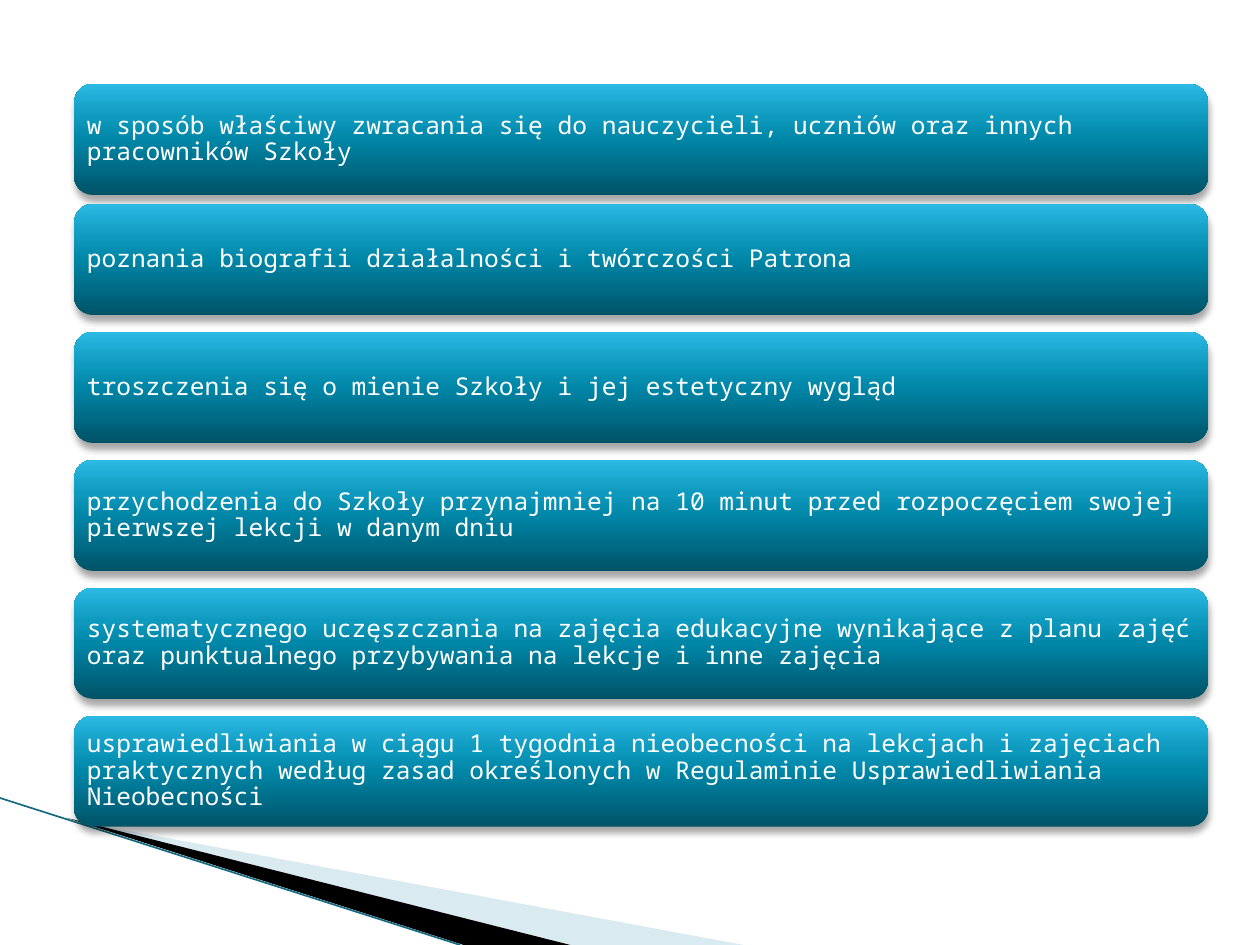
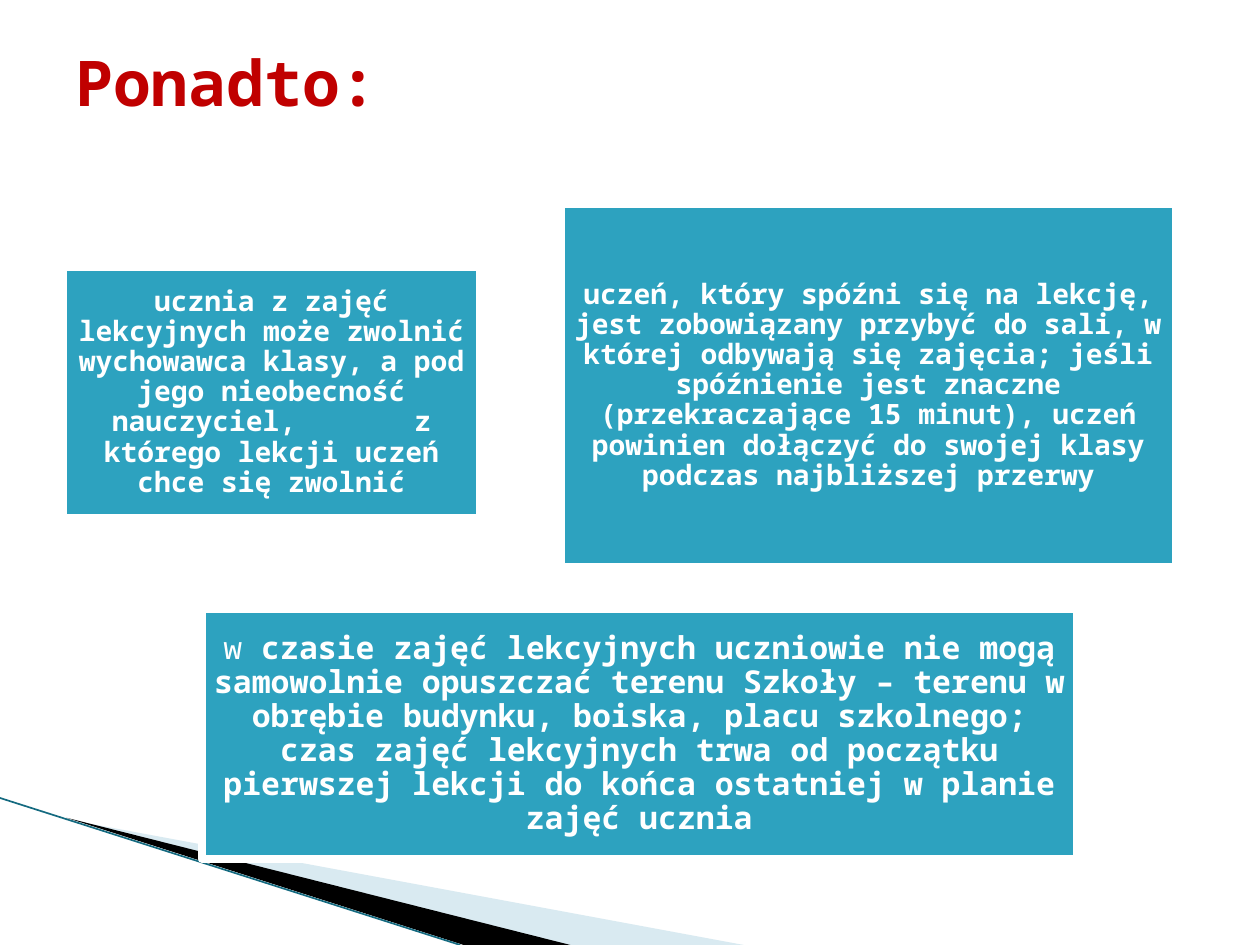
from dataclasses import dataclass

from lxml import etree
from pptx import Presentation
from pptx.dml.color import RGBColor
from pptx.enum.shapes import MSO_CONNECTOR, MSO_SHAPE
from pptx.enum.text import MSO_ANCHOR, PP_ALIGN
from pptx.oxml.ns import qn
from pptx.util import Pt

STRAIGHT = MSO_CONNECTOR.STRAIGHT
RECTANGLE = MSO_SHAPE.RECTANGLE
ROUNDED = MSO_SHAPE.ROUNDED_RECTANGLE
MIDDLE = MSO_ANCHOR.MIDDLE
LEFT, CENTER = PP_ALIGN.LEFT, PP_ALIGN.CENTER

FONT = "Noto Sans Mono"
WHITE = "FFFFFF"
BLACK = "000000"
TITLE_RED = "C00000"
RULE_BLUE = "2DA2BF"
PALE_BLUE = "A0CBDC"
EDGE_TEAL = "146A80"
DUTY_GRADIENT = ((0, "005367"), (50, "0086A7"), (70, "0E9ABE"), (100, "2CB9E3"))

DUTY_LEFT, DUTY_WIDTH, DUTY_HEIGHT = 42.4, 648, 63.4
FIRST_DUTY_TOP, SECOND_DUTY_TOP, DUTY_STEP = 48, 116.6, 73.1


@dataclass(frozen=True)
class Phrase:
    text: str
    bold: bool = True


@dataclass(frozen=True)
class Rule:
    left: float
    top: float
    width: float
    height: float
    size: float
    phrases: tuple[Phrase, ...]
    tab: float | None = None


@dataclass(frozen=True)
class Wedge:
    corners: tuple[tuple[float, float], ...]
    color: str
    opacity: int = 100


WEDGES = (
    Wedge(((39.5, 468.5), (425, 540), (325, 540)), PALE_BLUE, 40),
    Wedge(((38, 467.3), (326, 540), (265, 540)), BLACK),
)

DUTIES = (
    "w sposób właściwy zwracania się do nauczycieli, uczniów oraz innych "
    "pracowników Szkoły",
    "poznania biografii działalności i twórczości Patrona",
    "troszczenia się o mienie Szkoły i jej estetyczny wygląd",
    "przychodzenia do Szkoły przynajmniej na 10 minut przed rozpoczęciem swojej "
    "pierwszej lekcji w danym dniu",
    "systematycznego uczęszczania na zajęcia edukacyjne wynikające z planu zajęć "
    "oraz punktualnego przybywania na lekcje i inne zajęcia",
    "usprawiedliwiania w ciągu 1 tygodnia nieobecności na lekcjach i zajęciach "
    "praktycznych według zasad określonych w Regulaminie Usprawiedliwiania "
    "Nieobecności",
)

RULES = (
    Rule(36, 152.9, 238.3, 143, 16, (
        Phrase("ucznia z zajęć lekcyjnych może zwolnić wychowawca klasy, a pod jego "
               "nieobecność nauczyciel,\tz którego lekcji uczeń chce się zwolnić"),
    ), tab=172.8),
    Rule(320.6, 116.6, 351.2, 207.6, 16, (
        Phrase("uczeń, który spóźni się na lekcję, jest zobowiązany przybyć do sali, "
               "w której odbywają się zajęcia; jeśli spóźnienie jest znaczne "
               "(przekraczające 15 minut), uczeń powinien dołączyć do swojej klasy "
               "podczas najbliższej przerwy"),
    )),
    Rule(115.4, 348, 499.8, 143, 18, (
        Phrase("w ", bold=False),
        Phrase("czasie zajęć lekcyjnych uczniowie nie mogą samowolnie opuszczać "
               "terenu Szkoły – terenu w obrębie budynku, boiska, placu szkolnego; "
               "czas zajęć lekcyjnych trwa od początku pierwszej lekcji do końca "
               "ostatniej w planie zajęć ucznia"),
    )),
)


def rgb(color: str) -> RGBColor:
    return RGBColor.from_string(color)


def add_color(parent, color: str, opacity: int = 100) -> None:
    node = etree.SubElement(parent, qn("a:srgbClr"), val=color)
    if opacity < 100:
        etree.SubElement(node, qn("a:alpha"), val=str(opacity * 1000))


def write(shape, phrases: tuple[Phrase, ...], size: float, color: str,
          align, inset: tuple[float, float], line_spacing: float = 1.0,
          tab: float | None = None) -> None:
    """Fill a shape with one paragraph; inset is horizontal, then vertical."""
    frame = shape.text_frame
    frame.word_wrap = True
    frame.vertical_anchor = MIDDLE
    frame.margin_left = frame.margin_right = Pt(inset[0])
    frame.margin_top = frame.margin_bottom = Pt(inset[1])
    paragraph = frame.paragraphs[0]
    paragraph.alignment = align
    paragraph.line_spacing = line_spacing
    if tab is not None:
        properties = paragraph._p.get_or_add_pPr()
        stops = etree.SubElement(properties, qn("a:tabLst"))
        etree.SubElement(stops, qn("a:tab"), pos=str(Pt(tab)), algn="l")
    for phrase in phrases:
        run = paragraph.add_run()
        run.text = phrase.text
        run.font.name = FONT
        run.font.size = Pt(size)
        run.font.bold = phrase.bold
        run.font.color.rgb = rgb(color)


def draw_wedge(slide, wedge: Wedge) -> None:
    start, *others = [(Pt(x), Pt(y)) for x, y in wedge.corners]
    builder = slide.shapes.build_freeform(*start)
    builder.add_line_segments(others)
    shape = builder.convert_to_shape()
    shape.shadow.inherit = False
    shape.line.fill.background()
    shape.fill.solid()
    shape.fill.fore_color.rgb = rgb(wedge.color)
    if wedge.opacity < 100:
        solid = shape._element.spPr.find(qn("a:solidFill"))
        solid.clear()
        add_color(solid, wedge.color, wedge.opacity)


def add_decorated_slide(deck):
    """Add a blank slide with the shared wedges in the lower left corner."""
    slide = deck.slides.add_slide(deck.slide_layouts[6])
    for wedge in WEDGES:
        draw_wedge(slide, wedge)
    edge = slide.shapes.add_connector(STRAIGHT, Pt(0), Pt(456), Pt(263), Pt(540))
    edge.line.color.rgb = rgb(EDGE_TEAL)
    edge.line.width = Pt(0.95)
    etree.SubElement(edge._element.spPr, qn("a:effectLst"))
    return slide


def apply_duty_gradient(shape) -> None:
    shape.fill.gradient()
    shape.fill.gradient_angle = 90
    stops = shape._element.spPr.find(f".//{qn('a:gsLst')}")
    stops.clear()
    for position, color in DUTY_GRADIENT:
        stop = etree.SubElement(stops, qn("a:gs"), pos=str(position * 1000))
        add_color(stop, color)


def apply_soft_shadow(shape) -> None:
    shape.shadow.inherit = False
    effects = shape._element.spPr.find(qn("a:effectLst"))
    shadow = etree.SubElement(
        effects, qn("a:outerShdw"), blurRad=str(Pt(4)), dist=str(Pt(3)),
        dir="5400000", rotWithShape="0")
    add_color(shadow, BLACK, 35)


def draw_duty(slide, top: float, text: str) -> None:
    bar = slide.shapes.add_shape(
        ROUNDED, Pt(DUTY_LEFT), Pt(top), Pt(DUTY_WIDTH), Pt(DUTY_HEIGHT))
    apply_duty_gradient(bar)
    bar.line.fill.background()
    apply_soft_shadow(bar)
    write(bar, (Phrase(text, bold=False),), 14, WHITE, LEFT, (4.2, 4.2), 0.9)


def draw_rule(slide, rule: Rule) -> None:
    panel = slide.shapes.add_shape(
        RECTANGLE, Pt(rule.left), Pt(rule.top), Pt(rule.width), Pt(rule.height))
    panel.shadow.inherit = False
    panel.fill.solid()
    panel.fill.fore_color.rgb = rgb(RULE_BLUE)
    panel.line.color.rgb = rgb(WHITE)
    panel.line.width = Pt(4.33)
    write(panel, rule.phrases, rule.size, WHITE, CENTER, (5, 5), 0.9, rule.tab)


def draw_title(slide, text: str) -> None:
    title = slide.shapes.add_textbox(Pt(36), Pt(21.6), Pt(648), Pt(49.7))
    write(title, (Phrase(text),), 36, TITLE_RED, LEFT, (7.2, 3.6))


def build_duties_slide(deck) -> None:
    slide = add_decorated_slide(deck)
    later_tops = [SECOND_DUTY_TOP + DUTY_STEP * i for i in range(len(DUTIES) - 1)]
    for top, duty in zip([FIRST_DUTY_TOP, *later_tops], DUTIES):
        draw_duty(slide, top, duty)


def build_rules_slide(deck) -> None:
    slide = add_decorated_slide(deck)
    for rule in RULES:
        draw_rule(slide, rule)
    draw_title(slide, "Ponadto:")


def main() -> None:
    deck = Presentation()
    deck.slide_width, deck.slide_height = Pt(720), Pt(540)
    build_duties_slide(deck)
    build_rules_slide(deck)
    deck.save("out.pptx")


if __name__ == "__main__":
    main()
